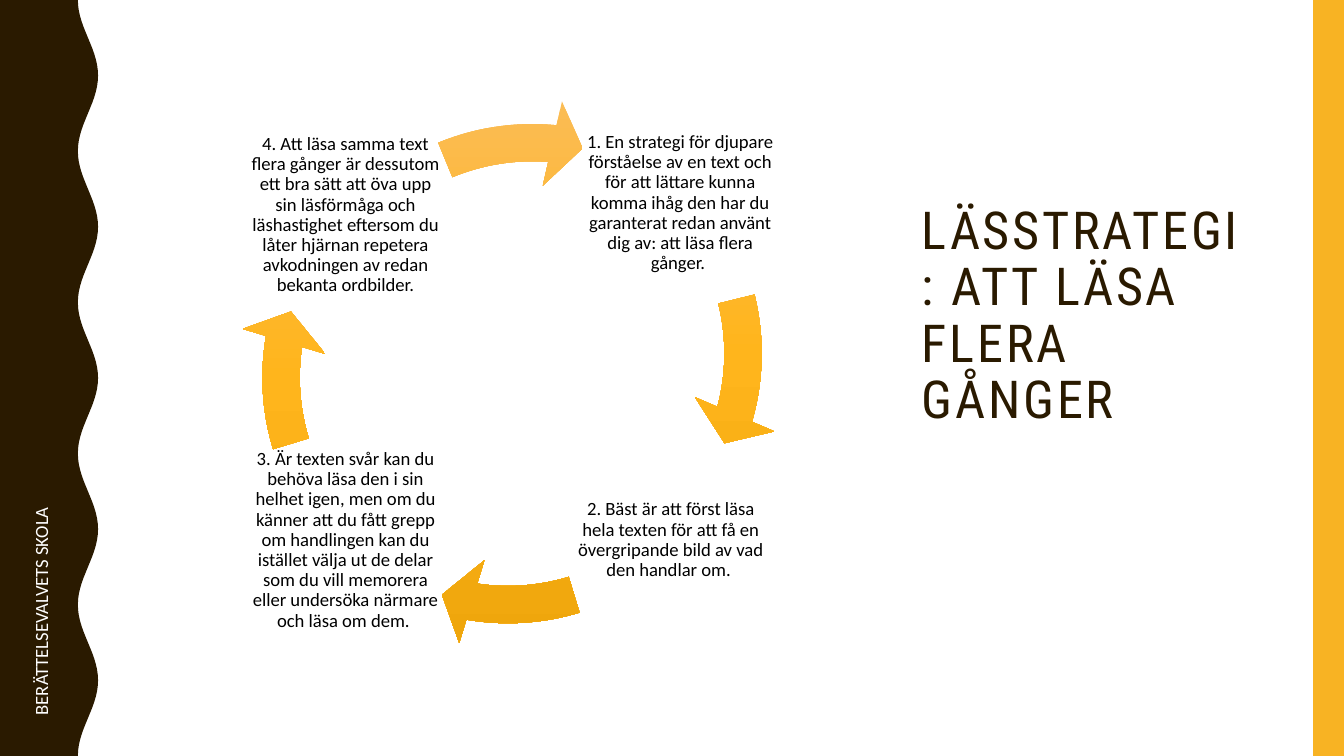
import math
from copy import deepcopy

from pptx import Presentation
from pptx import util as u
from pptx.dml.color import RGBColor
from pptx.enum import shapes, text

BROWN = RGBColor(0x2A, 0x1A, 0x00)
GOLD = RGBColor(0xF8, 0xB3, 0x23)
BLACK = RGBColor(0x00, 0x00, 0x00)
WHITE = RGBColor(0xFF, 0xFF, 0xFF)
ARROW_COLORS = [RGBColor(0xFB, 0xBC, 0x54), RGBColor(0xFF, 0xB5, 0x1C), RGBColor(0xEF, 0xA6, 0x0C)]
WIDTH = 10
HEIGHT = WIDTH * 9 / 16
WAVES, WAVE_STEPS = 5, 28
WAVE_MIN, WAVE_MAX = 0.58, 0.73
STEPS = [
    ((4.35, 0.8, 1.42, 1.42),
     "1. En strategi för djupare förståelse av en text och för att lättare kunna komma ihåg "
     "den har du garanterat redan använt dig av: att läsa flera gånger. "),
    ((4.28, 3.31, 1.42, 1.42),
     "2. Bäst är att först läsa hela texten för att få en övergripande bild av vad den handlar om. "),
    ((1.86, 3.31, 1.42, 1.42),
     "3. Är texten svår kan du behöva läsa den i sin helhet igen, men om du känner att du fått "
     "grepp om handlingen kan du istället välja ut de delar som du vill memorera eller "
     "undersöka närmare och läsa om dem. "),
    ((1.83, 0.89, 1.48, 1.42),
     "4. Att läsa samma text flera gånger är dessutom ett bra sätt att öva upp sin läsförmåga "
     "och läshastighet eftersom du låter hjärnan repetera avkodningen av redan bekanta ordbilder."),
]
ARROWS = [(1.83, 0.62, 9.33, 207.68), (1.77, 0.8, 59.51, 43.84),
          (1.77, 0.8, 113.51, 97.84), (1.95, 0.74, 165.06, 148.49)]


def inches(values):
    """Convert a row of numbers to lengths."""
    return [u.Inches(v) for v in values]


def style_plain(sp, color):
    """Give a shape a flat fill without line or shadow."""
    sp.fill.solid()
    sp.fill.fore_color.rgb = color
    sp.line.fill.background()
    sp.shadow.inherit = False


def add_run(p, words, size, font, color):
    """Add one formatted run to a paragraph."""
    r = p.add_run()
    r.text = words
    r.font.size = u.Pt(size)
    r.font.name = font
    r.font.color.rgb = color
    return r


def add_wave_panel(s):
    """Draw the dark left panel with its wavy edge."""
    middle, swing = (WAVE_MIN + WAVE_MAX) / 2, (WAVE_MAX - WAVE_MIN) / 2
    count = WAVES * WAVE_STEPS
    edge = [(middle - swing * math.cos(2 * math.pi * i / WAVE_STEPS), HEIGHT * i / count)
            for i in range(count + 1)]
    builder = s.shapes.build_freeform(0, 0, scale=1)
    builder.add_line_segments([inches(pt) for pt in edge + [(0, HEIGHT)]], close=True)
    style_plain(builder.convert_to_shape(), BROWN)


def add_side_bar(s):
    """Draw the gold bar along the right edge."""
    box = inches((9.77, 0, 0.23, HEIGHT))
    style_plain(s.shapes.add_shape(shapes.MSO_SHAPE.RECTANGLE, *box), GOLD)


def set_title(s):
    """Place and format the title."""
    sp = s.shapes.title
    sp.left, sp.top, sp.width, sp.height = inches((6.76, 1.47, 2.68, 3.12))
    tf = sp.text_frame
    tf.word_wrap = True
    tf.vertical_anchor = text.MSO_ANCHOR.TOP
    p = tf.paragraphs[0]
    p.alignment = text.PP_ALIGN.LEFT
    p.line_spacing = 0.9
    r = add_run(p, "LÄSSTRATEGI: ATT LÄSA FLERA GÅNGER", 28, "Roboto Condensed", BROWN)
    r.font._element.set("spc", "150")


def add_step(s, box, words):
    """Add the centred text of one step in the cycle."""
    tf = s.shapes.add_textbox(*inches(box)).text_frame
    tf.word_wrap = True
    tf.vertical_anchor = text.MSO_ANCHOR.MIDDLE
    tf.margin_left = tf.margin_right = tf.margin_top = tf.margin_bottom = u.Inches(0.01)
    p = tf.paragraphs[0]
    p.alignment = text.PP_ALIGN.CENTER
    p.line_spacing = 0.9
    add_run(p, words, 10, "Calibri", BLACK)


def add_arrow(s, left, top, end, start):
    """Add one curved gradient arrow of the cycle."""
    box = inches((left, top, 4.02, 4.02))
    sp = s.shapes.add_shape(shapes.MSO_SHAPE.CIRCULAR_ARROW, *box)
    for i, value in enumerate((0.069, 4.65, end, start, 0.08)):
        sp.adjustments[i] = value
    sp.line.fill.background()
    sp.shadow.inherit = False
    sp.fill.gradient()
    sp.fill.gradient_angle = 270
    stop_list = sp._element.spPr.find(".//{*}gsLst")
    stop_list.insert(1, deepcopy(stop_list[0]))
    for stop, color, position in zip(sp.fill.gradient_stops, ARROW_COLORS, (0, 0.5, 1)):
        stop.color.rgb = color
        stop.position = position


def add_side_label(s):
    """Add the upright label on the dark panel."""
    sp = s.shapes.add_textbox(*inches((-1.15, 3.83, 2.91, 0.27)))
    sp.rotation = 270
    tf = sp.text_frame
    tf.word_wrap = True
    tf.auto_size = text.MSO_AUTO_SIZE.SHAPE_TO_FIT_TEXT
    add_run(tf.paragraphs[0], "BERÄTTELSEVALVETS SKOLA", 10, "Calibri", WHITE)


def main():
    """Build the slide and save it."""
    prs = Presentation()
    prs.slide_width, prs.slide_height = inches((WIDTH, HEIGHT))
    s = prs.slides.add_slide(prs.slide_layouts[5])
    add_wave_panel(s)
    add_side_bar(s)
    set_title(s)
    for (box, words), arrow in zip(STEPS, ARROWS):
        add_step(s, box, words)
        add_arrow(s, *arrow)
    add_side_label(s)
    prs.save("out.pptx")


if __name__ == "__main__":
    main()
